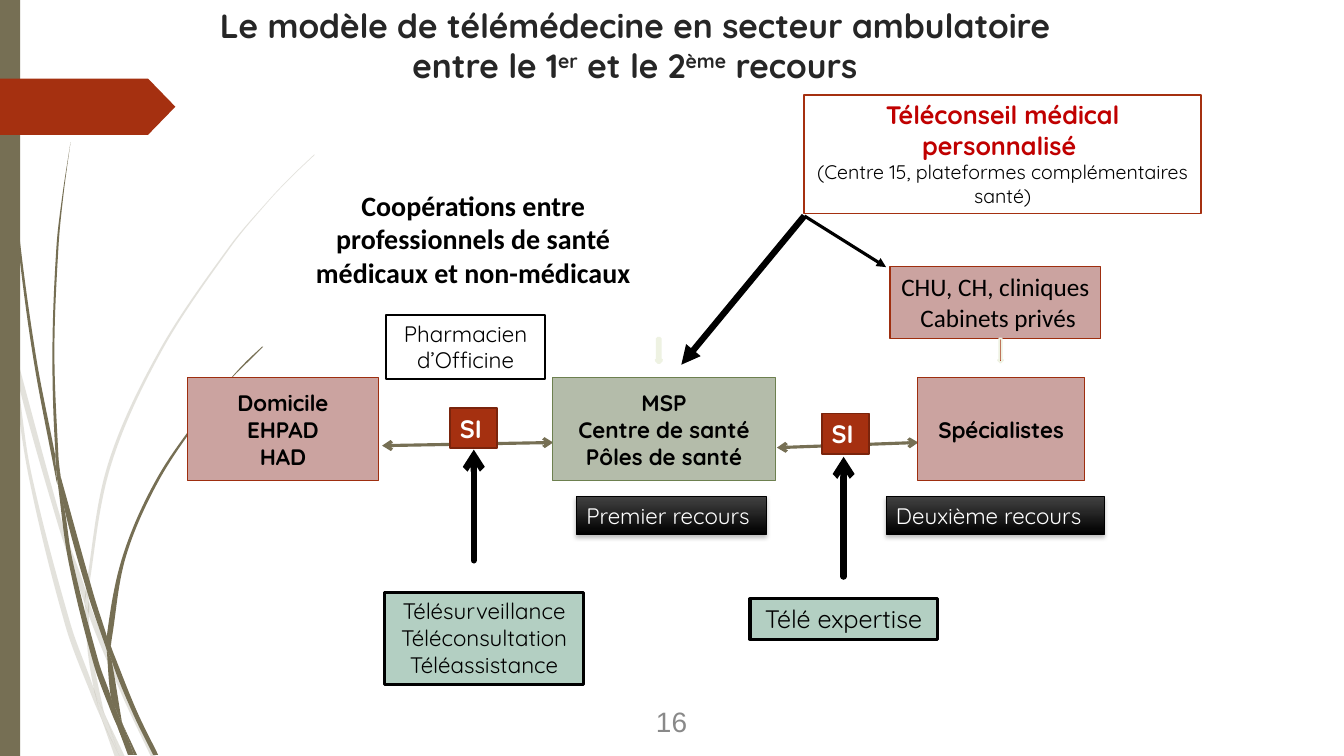
from lxml import etree
from pptx import Presentation
from pptx.dml.color import RGBColor
from pptx.enum.shapes import MSO_CONNECTOR, MSO_SHAPE
from pptx.enum.text import MSO_ANCHOR, PP_ALIGN
from pptx.oxml import parse_xml
from pptx.oxml.ns import nsdecls, qn
from pptx.util import Cm, Pt

RECT, DOWN, STRAIGHT = MSO_SHAPE.RECTANGLE, MSO_SHAPE.DOWN_ARROW, MSO_CONNECTOR.STRAIGHT
TOP, MIDDLE = MSO_ANCHOR.TOP, MSO_ANCHOR.MIDDLE
LEFT, CENTER = PP_ALIGN.LEFT, PP_ALIGN.CENTER

BLACK = RGBColor(0x00, 0x00, 0x00)
WHITE = RGBColor(0xFF, 0xFF, 0xFF)
TITLE_GREY = RGBColor(0x26, 0x26, 0x26)
NUMBER_GREY = RGBColor(0x89, 0x89, 0x89)
CHARCOAL = RGBColor(0x41, 0x41, 0x41)
OLIVE = RGBColor(0x76, 0x6F, 0x54)
RUST = RGBColor(0xA5, 0x30, 0x10)
RUST_EDGE = RGBColor(0x9E, 0x2E, 0x0F)
RUST_DARK = RGBColor(0x7A, 0x24, 0x0C)
RED = RGBColor(0xC0, 0x00, 0x00)
PINK = RGBColor(0xCB, 0xA3, 0xA0)
SAGE = RGBColor(0xB4, 0xBC, 0xAA)
SAGE_EDGE = RGBColor(0x6D, 0x80, 0x4F)
MINT = RGBColor(0xB3, 0xCF, 0xC2)
CREAM = RGBColor(0xEE, 0xF2, 0xE2)

prs = Presentation()
prs.slide_width, prs.slide_height = Cm(33.87), Cm(19.05)
slide = prs.slides.add_slide(prs.slide_layouts[6])
shapes = slide.shapes


def paint(shape, fill, edge=None, weight=0):
    shape.shadow.inherit = False
    shape.fill.solid()
    shape.fill.fore_color.rgb = fill
    if edge is None:
        shape.line.fill.background()
    else:
        shape.line.color.rgb = edge
        shape.line.width = Pt(weight)


def write(frame, lines, size, colour, bold=False, font="Quicksand", align=CENTER):
    """Each line is a list of (text, baseline) runs."""
    for line in lines:
        paragraph = frame.paragraphs[0]
        if paragraph.runs:
            paragraph = frame.add_paragraph()
        paragraph.alignment = align
        for text, baseline in line:
            run = paragraph.add_run()
            run.text = text
            run.font.size, run.font.bold, run.font.name = Pt(size), bold, font
            run.font.color.rgb = colour
            if baseline:
                run.font._element.set("baseline", str(baseline * 1000))


# Grass blades: left and right edge of each piece from top to bottom, in units of 2.54 cm
UNIT = 2.54
pale_blades = [
    ([(0, 2.82), (0, 2.99), (.1, 3.44), (.11, 3.5)], [(0, 2.82), (.09, 3.22), (.11, 3.5)]),
    ([(.14, 3.45), (.17, 3.76), (.58, 5.22), (.84, 5.99)],
     [(.14, 3.45), (.62, 5.2), (.85, 5.86), (.84, 5.99)]),
    ([(.88, 5.96), (.88, 6.1), (1.23, 6.94), (1.5, 7.51)],
     [(.88, 5.96), (.92, 6.07), (1.27, 6.92), (1.55, 7.51)]),
    ([(1.05, 7.11), (1.19, 7.51)], [(1.05, 7.11), (1.24, 7.51)]),
    ([(.11, 3.5), (.28, 4.7), (.65, 6.21), (.92, 6.93), (1.01, 7.14)],
     [(.11, 3.5), (.17, 3.76), (.31, 4.69), (.7, 6.19), (.93, 6.83), (.99, 7.07), (1.01, 7.14)]),
    ([(.84, 5.99), (.87, 6.46), (.93, 6.83), (.96, 6.92), (1.05, 7.11)],
     [(.84, 5.99), (.88, 6.08), (.88, 6.1), (.91, 6.46), (1.03, 7.06), (1.05, 7.11)]),
    ([(3.12, 1.53), (2.89, 1.75), (2.68, 1.97), (2.28, 2.44), (1.58, 3.48), (1.07, 4.61),
      (.85, 5.84), (.85, 5.86), (.88, 5.96)],
     [(3.12, 1.54), (2.9, 1.75), (2.68, 1.98), (2.29, 2.45), (1.6, 3.49), (1.1, 4.62),
      (.88, 5.84), (.88, 5.96)]),
    ([(1.01, 7.14), (1.14, 7.51)], [(1.01, 7.14), (1.19, 7.51)]),
    ([(.85, 5.86), (.84, 5.99), (.88, 6.08), (.88, 6.1)], [(.85, 5.86), (.88, 5.96), (.88, 6.1)]),
    ([(.93, 6.83), (.99, 7.07), (1.01, 7.14), (1.19, 7.51)],
     [(.93, 6.83), (.96, 6.92), (1.05, 7.11), (1.19, 7.51)]),
]
dark_blades = [
    ([(.03, 0), (.03, .48), (.07, 1.1), (.17, 2.33), (.33, 3.55), (.56, 4.77), (.57, 4.81)],
     [(.03, 0), (.05, .48), (.08, 1.09), (.19, 2.32), (.36, 3.55), (.55, 4.53), (.55, 4.57),
      (.57, 4.81)]),
    ([(.6, 4.72), (.64, 5.05), (.88, 5.92), (1.06, 6.45)],
     [(.6, 4.72), (.93, 5.9), (1.06, 6.31), (1.06, 6.33), (1.06, 6.45)]),
    ([(1.1, 6.41), (1.11, 6.56), (1.32, 7.08), (1.52, 7.49)],
     [(1.1, 6.41), (1.13, 6.49), (1.36, 7.06), (1.57, 7.49)]),
    ([(.57, 4.77), (.68, 5.57), (.93, 6.59), (1.11, 7.08), (1.17, 7.22)],
     [(.57, 4.77), (.64, 5.05), (.72, 5.56), (.98, 6.57), (1.1, 6.91), (1.16, 7.17), (1.17, 7.22)]),
    ([(.7, 1.41), (.62, 1.93), (.56, 2.45), (.52, 3.49), (.55, 4.49), (.6, 4.72)],
     [(.7, 1.41), (.63, 1.93), (.58, 2.45), (.54, 3.49), (.58, 4.53), (.6, 4.72)]),
    ([(1.22, 7.19), (1.33, 7.49)], [(1.22, 7.19), (1.36, 7.49)]),
    ([(.55, 4.49), (.55, 4.53), (.57, 4.77), (.64, 5.05)], [(.55, 4.49), (.6, 4.72), (.64, 5.05)]),
    ([(2.6, 3.44), (2.45, 3.58), (2.31, 3.73), (2.04, 4.05), (1.56, 4.74), (1.22, 5.51),
      (1.06, 6.31), (1.1, 6.41)],
     [(2.61, 3.44), (2.46, 3.59), (2.31, 3.74), (2.05, 4.06), (1.58, 4.76), (1.25, 5.52),
      (1.11, 6.33), (1.1, 6.41)]),
    ([(1.17, 7.22), (1.27, 7.49)], [(1.17, 7.22), (1.31, 7.49)]),
    ([(1.06, 6.45), (1.1, 6.91), (1.16, 7.06), (1.22, 7.19)],
     [(1.06, 6.45), (1.09, 6.51), (1.11, 6.56), (1.21, 7.16), (1.22, 7.19)]),
    ([(1.06, 6.31), (1.06, 6.45), (1.09, 6.51), (1.11, 6.56)],
     [(1.06, 6.31), (1.1, 6.41), (1.11, 6.56)]),
    ([(1.1, 6.91), (1.17, 7.22), (1.3, 7.49)],
     [(1.1, 6.91), (1.16, 7.06), (1.22, 7.19), (1.33, 7.49)]),
]
for pieces, opacity in ((pale_blades, 20), (dark_blades, 100)):
    tuft = shapes.add_group_shape().shapes
    for edges in pieces:
        sides = []
        for edge in edges:
            slopes = []
            for i in range(len(edge)):
                (x1, y1), (x2, y2) = edge[max(i - 1, 0)], edge[min(i + 1, len(edge) - 1)]
                slopes.append((x2 - x1) / (y2 - y1))
            sides.append([(Cm(x * UNIT), Cm(y * UNIT), m) for (x, y), m in zip(edge, slopes)])
        outline = sides[0] + sides[1][::-1]
        builder = tuft.build_freeform(*outline[0][:2])
        builder.add_line_segments([point[:2] for point in outline[1:]], close=True)
        blade = builder.convert_to_shape()
        paint(blade, OLIVE)
        if opacity < 100:
            tint = blade._element.spPr.find(".//" + qn("a:srgbClr"))
            etree.SubElement(tint, qn("a:alpha")).set("val", str(opacity * 1000))
        # Bend every segment along the slopes at its two ends
        segments = list(blade._element.iter(qn("a:lnTo")))
        for segment, (x1, y1, m1), (x2, y2, m2) in zip(segments, outline, outline[1:]):
            third = (y2 - y1) / 3
            segment.tag = qn("a:cubicBezTo")
            for x, y in ((x2 - third * m2, y2 - third), (x1 + third * m1, y1 + third)):
                handle = etree.Element(qn("a:pt"))
                handle.set("x", str(round(x - blade.left)))
                handle.set("y", str(round(y - blade.top)))
                segment.insert(0, handle)

# Side bar and page tab
paint(shapes.add_shape(RECT, 0, 0, Cm(.51), Cm(19.05)), OLIVE)
tab = shapes.build_freeform(Cm(-.03), Cm(1.98))
tab.add_line_segments([(Cm(x), Cm(y)) for x, y in
                       ((3.73, 1.98), (4.42, 2.69), (3.73, 3.4), (-.03, 3.4))], close=True)
paint(tab.convert_to_shape(), RUST)

# Title, cooperation heading and page number
labels = [
    ((4.24, 0, 23.52, 3.18), TOP, 24, TITLE_GREY, True, "Quicksand",
     [[("Le modèle de télémédecine en secteur ambulatoire entre le 1", 0), ("er", 30),
       (" et le 2", 0), ("ème", 30), (" recours", 0)]]),
    ((7.34, 4.62, 9.17, 2.82), TOP, 20, BLACK, True, "Calibri",
     [[("Coopérations entre professionnels de santé", 0)], [("médicaux et non-médicaux", 0)]]),
    ((12.9, 17.66, 8.05, 1.02), MIDDLE, 20, NUMBER_GREY, False, "Arial", [[("16", 0)]]),
]
for place, anchor, size, colour, bold, font, lines in labels:
    frame = shapes.add_textbox(*[Cm(v) for v in place]).text_frame
    frame.word_wrap, frame.vertical_anchor = True, anchor
    write(frame, lines, size, colour, bold, font)

# Arrows: start, end, colour, weight, line cap, head at start, head at end
arrows = [
    ((9.63, 11.23), (13.94, 11.15), OLIVE, 2.25, "flat", "arrow", "arrow"),
    ((19.58, 11.28), (23.14, 11.15), OLIVE, 2.25, "flat", "arrow", "arrow"),
    ((11.94, 14.12), (11.94, 11.33), BLACK, 4.5, "rnd", "none", "arrow"),
    ((21.26, 14.53), (21.26, 11.51), BLACK, 4.5, "rnd", "none", "arrow"),
    ((20.27, 5.44), (17.17, 9.19), BLACK, 4.5, "flat", "none", "triangle"),
    ((20.27, 5.44), (22.33, 6.73), BLACK, 2.25, "flat", "none", "triangle"),
]
for start, end, colour, weight, cap, start_head, end_head in arrows:
    arrow = shapes.add_connector(STRAIGHT, *[Cm(v) for v in start + end])
    arrow.line.color.rgb, arrow.line.width = colour, Pt(weight)
    stroke = arrow.line._get_or_add_ln()
    stroke.set("cap", cap)
    etree.SubElement(stroke, qn("a:headEnd")).set("type", start_head)
    etree.SubElement(stroke, qn("a:tailEnd")).set("type", end_head)
    etree.SubElement(arrow._element.spPr, qn("a:effectLst"))

# Boxes: place, fill, edge, weight, anchor, wrap, size, colour, bold, font, align, lines
PLACE_STYLE = (.75, MIDDLE, True, 16, BLACK, True, "Quicksand", CENTER)
SI_STYLE = (RUST, RUST_DARK, 1.25, TOP, True, 18, WHITE, True, "Quicksand", LEFT, ["SI"])
boxes = [
    ((4.72, 9.52, 4.82, 2.6), PINK, RUST_EDGE, *PLACE_STYLE, ["Domicile", "EHPAD", "HAD"]),
    ((13.93, 9.52, 5.61, 2.6), SAGE, SAGE_EDGE, *PLACE_STYLE,
     ["MSP", "Centre de santé", "Pôles de santé"]),
    ((23.13, 9.52, 4.2, 2.6), PINK, RUST_EDGE, *PLACE_STYLE, ["Spécialistes"]),
    ((9.7, 14.93, 5, 2.31), MINT, BLACK, 2.25, TOP, False, 16, BLACK, False, "Quicksand",
     CENTER, ["Télésurveillance", "Téléconsultation", "Téléassistance"]),
    ((18.9, 15.09, 4.72, 1.02), MINT, BLACK, 2.25, TOP, False,
     18, BLACK, False, "Quicksand", CENTER, ["Télé expertise"]),
    ((22.43, 6.72, 5.31, 1.8), PINK, RUST_EDGE, .75, TOP, False,
     18, BLACK, False, "Calibri", CENTER, ["CHU, CH, cliniques", " Cabinets privés"]),
    ((9.73, 7.93, 4.01, 1.62), WHITE, BLACK, 1.25, TOP, True,
     16, BLACK, False, "Quicksand", CENTER, ["Pharmacien d’Officine"]),
    ((11.34, 10.28, 1.19, 1.02), *SI_STYLE),
    ((20.71, 10.42, 1.19, 1.02), *SI_STYLE),
]
for place, fill, edge, weight, anchor, wrap, size, colour, bold, font, align, lines in boxes:
    box = shapes.add_shape(RECT, *[Cm(v) for v in place])
    paint(box, fill, edge, weight)
    box.text_frame.vertical_anchor, box.text_frame.word_wrap = anchor, wrap
    write(box.text_frame, [[(line, 0)] for line in lines], size, colour, bold, font, align)

# Medical advice box
advice = shapes.add_shape(RECT, Cm(20.27), Cm(2.39), Cm(10), Cm(2.99))
paint(advice, WHITE, RUST, 1.25)
advice.text_frame.word_wrap, advice.text_frame.vertical_anchor = True, TOP
write(advice.text_frame, [[("Téléconseil médical personnalisé ", 0)]], 18, RED, True)
write(advice.text_frame, [[("(Centre 15, plateformes complémentaires santé)", 0)]], 14, BLACK)

# Small down arrows
for left, weight in ((25.15, 1.25), (16.54, 2.25)):
    paint(shapes.add_shape(DOWN, Cm(left), Cm(8.53), Cm(.13), Cm(.61)), RUST, CREAM, weight)

# Care level captions with gradient and soft shadow
for left, width, level in ((14.53, 4.78, "Premier recours"), (22.33, 5.5, "Deuxième recours")):
    caption = shapes.add_shape(RECT, Cm(left), Cm(12.52), Cm(width), Cm(.94))
    paint(caption, BLACK, BLACK, .75)
    caption.fill.gradient()
    caption.fill.gradient_angle = 270
    for stop, colour, position in zip(caption.fill.gradient_stops, (CHARCOAL, BLACK), (0, 1)):
        stop.color.rgb, stop.position = colour, position
    caption._element.spPr.find(qn("a:effectLst")).append(parse_xml(
        f'<a:outerShdw {nsdecls("a")} blurRad="38100" dist="25400" dir="5400000" rotWithShape="0">'
        '<a:srgbClr val="000000"><a:alpha val="25000"/></a:srgbClr></a:outerShdw>'))
    caption.text_frame.word_wrap, caption.text_frame.vertical_anchor = True, TOP
    write(caption.text_frame, [[(level, 0)]], 16, WHITE, align=LEFT)

prs.save("out.pptx")
